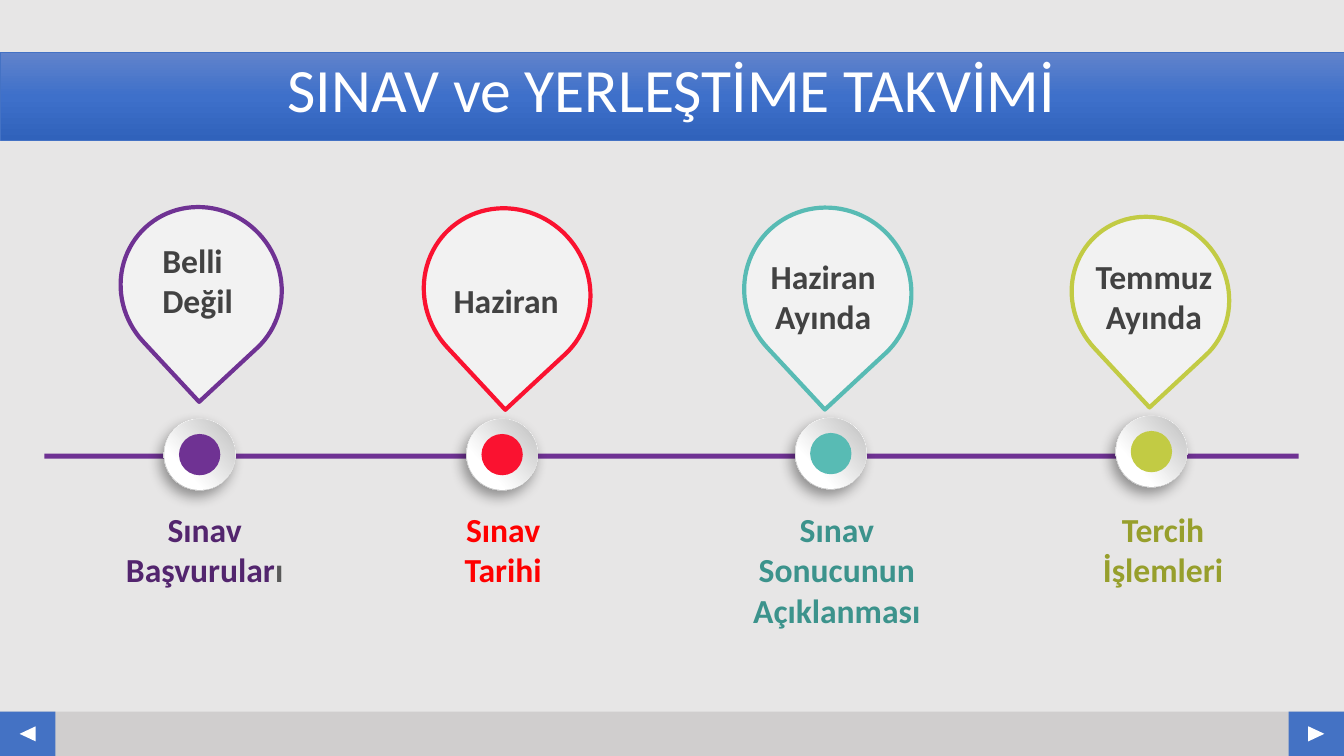
import dataclasses

import lxml.etree
import pptx
import pptx.dml.color
import pptx.enum.shapes
import pptx.enum.text
import pptx.oxml
import pptx.oxml.ns
import pptx.util

Inches = pptx.util.Inches
Pt = pptx.util.Pt
SHAPE = pptx.enum.shapes.MSO_SHAPE
ALIGN = pptx.enum.text.PP_ALIGN
ANCHOR = pptx.enum.text.MSO_ANCHOR
qn = pptx.oxml.ns.qn

FONT = "Calibri"
SLIDE_WIDTH, SLIDE_HEIGHT = 13.33, 7.5
BLUE, WHITE, PURPLE = "4472C4", "FFFFFF", "6F3293"
RING_SIZE, DOT_SIZE = 0.71, 0.41
CAPTION_TOP = 5


@dataclasses.dataclass
class Milestone:
    """Pin, note and caption lefts are measured from the ring centre."""
    center_x: float
    center_y: float
    color: str
    pin: tuple  # left, top, width, height
    note: tuple  # left, top, width
    date: str
    date_align: int
    caption: tuple  # left, width
    label: str
    label_colors: tuple  # one colour for each part of the label, split at "|"


MILESTONES = [
    Milestone(1.98, 4.51, PURPLE, (-0.77, 2.04, 1.57, 1.63),
              (-0.37, 2.33, 0.8), "Belli\nDeğil", ALIGN.LEFT,
              (-0.8, 1.7), "Sınav Başvurular|ı", ("53256E", "595959")),
    Milestone(4.98, 4.51, "FA1230", (-0.76, 2.05, 1.62, 1.69),
              (-0.59, 2.73, 1.26), "Haziran", ALIGN.CENTER,
              (-0.73, 1.48), "Sınav Tarihi", ("FF0000",)),
    Milestone(8.24, 4.5, "58BBB4", (-0.85, 2.05, 1.64, 1.68),
              (-0.78, 2.49, 1.41), "Haziran\nAyında", ALIGN.CENTER,
              (-0.92, 1.96), "Sınav Sonucunun Açıklanması", ("3C938C",)),
    Milestone(11.42, 4.48, "C2CB44", (-0.77, 2.13, 1.52, 1.61),
              (-0.66, 2.49, 1.37), "Temmuz\nAyında", ALIGN.CENTER,
              (-0.56, 1.35), "Tercih İşlemleri", ("979F2C",)),
]


def rgb(hex_color):
    return pptx.dml.color.RGBColor.from_string(hex_color)


def paint_gradient(shape, stops, angle):
    """Stops are (percent, colour); the angle runs clockwise."""
    shape.fill.gradient()
    shape.fill.gradient_angle = 360 - angle
    stop_list = shape.element.spPr.find(".//" + qn("a:gsLst"))
    for old_stop in list(stop_list):
        stop_list.remove(old_stop)
    for percent, color in stops:
        stop = lxml.etree.SubElement(stop_list, qn("a:gs"), pos=str(percent * 1000))
        lxml.etree.SubElement(stop, qn("a:srgbClr"), val=color)


def add_shape(slide, kind, left, top, width, height, fill=None, line=None, rotation=0):
    shape = slide.shapes.add_shape(
        kind, Inches(left), Inches(top), Inches(width), Inches(height))
    shape.shadow.inherit = False
    shape.rotation = rotation
    if fill:
        shape.fill.solid()
        shape.fill.fore_color.rgb = rgb(fill)
    if line:
        shape.line.color.rgb = rgb(line)
        shape.line.width = Pt(3)
    else:
        shape.line.fill.background()
    return shape


def add_disc(slide, center_x, center_y, size, fill=None, rotation=0):
    return add_shape(slide, SHAPE.OVAL, center_x - size / 2, center_y - size / 2,
                     size, size, fill, rotation=rotation)


def cast_shadow(shape):
    effects = shape.element.spPr.find(qn("a:effectLst"))
    shadow = lxml.etree.SubElement(
        effects, qn("a:outerShdw"), blurRad=str(Pt(10)), dist=str(Pt(5)),
        dir=str(123 * 60000), algn="ctr", rotWithShape="0")
    color = lxml.etree.SubElement(shadow, qn("a:srgbClr"), val="000000")
    lxml.etree.SubElement(color, qn("a:alpha"), val="39000")


def style_run(run, size, color, bold):
    run.font.name = FONT
    run.font.size = Pt(size)
    run.font.bold = bold
    run.font.color.rgb = rgb(color)


def add_text_box(slide, left, top, width, height):
    frame = slide.shapes.add_textbox(
        Inches(left), Inches(top), Inches(width), Inches(height)).text_frame
    frame.word_wrap = True
    frame.margin_left = frame.margin_right = 0
    return frame


def add_title_band(slide, left, top, width, height):
    title = slide.shapes.title
    title.left, title.top = Inches(left), Inches(top)
    title.width, title.height = Inches(width), Inches(height)
    paint_gradient(title, [(0, "6183CB"), (50, "3E70CA"), (100, "3062BB")], 90)
    title.line.color.rgb = rgb(BLUE)
    title.line.width = Pt(0.5)
    frame = title.text_frame
    frame.text = "SINAV ve YERLEŞTİME TAKVİMİ"
    frame.auto_size = pptx.enum.text.MSO_AUTO_SIZE.NONE
    frame.vertical_anchor = ANCHOR.MIDDLE
    frame.margin_bottom = Inches(0.12)
    heading = frame.paragraphs[0]
    heading.alignment = ALIGN.CENTER
    heading.line_spacing = 0.9
    style_run(heading.runs[0], 44, WHITE, False)


def add_navigation_bar(slide, left, top, width, height):
    button_width, arrow_width, arrow_height = 0.55, 0.15, 0.16
    add_shape(slide, SHAPE.RECTANGLE, left, top, width, height, "D0CECE")
    for button_left, rotation in ((left, 270), (left + width - button_width, 90)):
        add_shape(slide, SHAPE.RECTANGLE, button_left, top, button_width, height, BLUE)
        add_shape(slide, SHAPE.ISOSCELES_TRIANGLE,
                  button_left + (button_width - arrow_width) / 2,
                  top + (height - arrow_height) / 2,
                  arrow_width, arrow_height, WHITE, rotation=rotation)


def add_ring(slide, center_x, center_y, color):
    rim = add_disc(slide, center_x, center_y, RING_SIZE, rotation=62.3)
    paint_gradient(rim, [(17, "FFFFFF"), (88, "B8B8B8")], 45)
    cast_shadow(rim)
    face = add_disc(slide, center_x, center_y, RING_SIZE - 0.01, rotation=273)
    paint_gradient(face, [(29, "FFFFFF"), (98, "BFBFBF")], 45)
    add_disc(slide, center_x, center_y, DOT_SIZE, color)


def add_milestone(slide, milestone):
    x = milestone.center_x
    add_ring(slide, x, milestone.center_y, milestone.color)

    left, top, width, height = milestone.pin
    add_shape(slide, SHAPE.TEAR, x + left, top, width, height,
              "F2F2F2", milestone.color, rotation=137.1)

    left, top, width = milestone.note
    date = add_text_box(slide, x + left, top, width, 0.91)
    date.text = milestone.date
    for paragraph in date.paragraphs:
        paragraph.alignment = milestone.date_align
        style_run(paragraph.runs[0], 24, "424242", True)

    left, width = milestone.caption
    label = add_text_box(slide, x + left, CAPTION_TOP, width, 0.91).paragraphs[0]
    label.alignment = ALIGN.CENTER
    for part, color in zip(milestone.label.split("|"), milestone.label_colors):
        run = label.add_run()
        run.text = part
        style_run(run, 24, color, True)


def main():
    presentation = pptx.Presentation()
    presentation.slide_width = Inches(SLIDE_WIDTH)
    presentation.slide_height = Inches(SLIDE_HEIGHT)
    slide = presentation.slides.add_slide(presentation.slide_layouts[5])
    slide.background.fill.solid()
    slide.background.fill.fore_color.rgb = rgb("E7E6E6")

    add_navigation_bar(slide, 0, 7.06, SLIDE_WIDTH, 0.44)
    add_title_band(slide, 0, 0.52, SLIDE_WIDTH, 0.87)
    add_shape(slide, SHAPE.RECTANGLE, 0.44, 4.5, 12.44, 0.05, PURPLE)
    for milestone in MILESTONES:
        add_milestone(slide, milestone)
    presentation.save("out.pptx")


if __name__ == "__main__":
    main()
